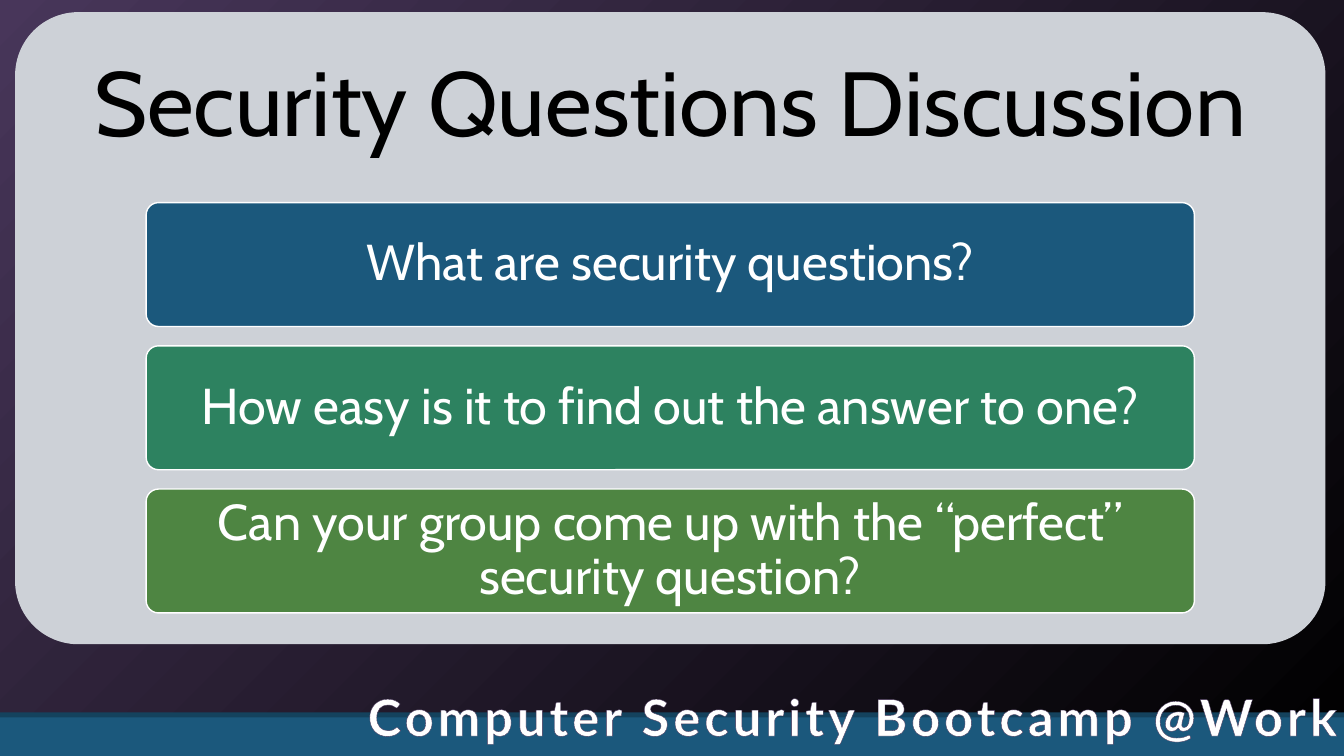
from lxml import etree
from pptx import Presentation
from pptx.dml.color import RGBColor
from pptx.enum import shapes, text
from pptx.oxml import ns
from pptx.util import Pt

PURPLE = RGBColor(0x48, 0x36, 0x5A)
BLACK = RGBColor(0, 0, 0)
WHITE = RGBColor(0xFF, 0xFF, 0xFF)
PALE = RGBColor(0xCD, 0xD1, 0xD7)
BLUE = RGBColor(0x1B, 0x58, 0x7C)
DARK_BLUE = RGBColor(0x14, 0x42, 0x5D)
TEAL = RGBColor(0x2D, 0x82, 0x60)
GREEN = RGBColor(0x4E, 0x85, 0x42)

SLIDE_W, SLIDE_H = 960, 540
QUESTIONS = [
    ("What are security questions?", BLUE),
    ("How easy is it to find out the answer to one?", TEAL),
    ("Can your group come up with the “perfect” security question?", GREEN),
]


def add_block(slide, kind, box, fill, line=None):
    block = slide.shapes.add_shape(kind, *map(Pt, box))
    block.shadow.inherit = False
    block.fill.solid()
    block.fill.fore_color.rgb = fill
    if line is None:
        block.line.fill.background()
    else:
        block.line.color.rgb = line
        block.line.width = Pt(1)
    if kind == shapes.MSO_SHAPE.ROUNDED_RECTANGLE:
        block.adjustments[0] = 0.1
    return block


def write_centred(shape, words, size, color, inset_x, inset_y):
    frame = shape.text_frame
    frame.word_wrap = True
    frame.vertical_anchor = text.MSO_ANCHOR.MIDDLE
    frame.margin_left = frame.margin_right = Pt(inset_x)
    frame.margin_top = frame.margin_bottom = Pt(inset_y)
    line = frame.paragraphs[0]
    line.text = words
    line.alignment = text.PP_ALIGN.CENTER
    line.line_spacing = 0.9
    line.font.name = "Cabin"
    line.font.size = Pt(size)
    line.font.color.rgb = color


def paint_background(slide):
    fill = slide.background.fill
    fill.gradient()
    fill.gradient_angle = 315
    for stop, color in zip(fill.gradient_stops, (PURPLE, BLACK)):
        stop.color.rgb = color


def add_footer(slide, left, top, width, height):
    # Bar with a darker upper edge
    rect = shapes.MSO_SHAPE.RECTANGLE
    add_block(slide, rect, (left, top, width, height), BLUE)
    add_block(slide, rect, (left, top - 1.2, width, 3.6), DARK_BLUE)

    # Course name, spaced out and outlined
    course = slide.shapes.add_textbox(
        Pt(left + 231.8), Pt(top - 23.8), Pt(731.5), Pt(51.1))
    course.text_frame.word_wrap = True
    line = course.text_frame.paragraphs[0]
    line.alignment = text.PP_ALIGN.RIGHT
    name = line.add_run()
    name.text = "Computer Security Bootcamp @Work"
    name.font.name = "Lato"
    name.font.size = Pt(36)
    name.font.bold = True
    name.font.color.rgb = WHITE
    props = name.font._element
    props.set("spc", "300")
    outline = etree.Element(ns.qn("a:ln"), w=str(Pt(0.75)))
    outline_fill = etree.SubElement(outline, ns.qn("a:solidFill"))
    etree.SubElement(outline_fill, ns.qn("a:srgbClr"), val=str(PURPLE))
    props.insert(0, outline)


def add_discussion(slide, left, top, width, height):
    rounded = shapes.MSO_SHAPE.ROUNDED_RECTANGLE
    add_block(slide, rounded, (left, top, width, height), PALE)

    # Title across the upper part of the panel
    title_h = 0.3 * height
    title = slide.shapes.add_textbox(*map(Pt, (left, top, width, title_h)))
    write_centred(title, "Security Questions Discussion", 65, BLACK, 19.5, 19.5)

    # Stack of question cards
    card_h, pitch = 88.5, 102.3
    for i, (question, color) in enumerate(QUESTIONS):
        box = (left + 0.1 * width, top + title_h + 0.6 + i * pitch,
               0.8 * width, card_h)
        card = add_block(slide, rounded, box, color, WHITE)
        write_centred(card, question, 36, WHITE, 7.2, 5)


def main():
    deck = Presentation()
    deck.slide_width, deck.slide_height = Pt(SLIDE_W), Pt(SLIDE_H)
    slide = deck.slides.add_slide(deck.slide_layouts[6])
    paint_background(slide)
    add_footer(slide, 0, 510, SLIDE_W, 30)
    add_discussion(slide, 10.8, 8.7, 936, 451.5)
    deck.save("out.pptx")


if __name__ == "__main__":
    main()
